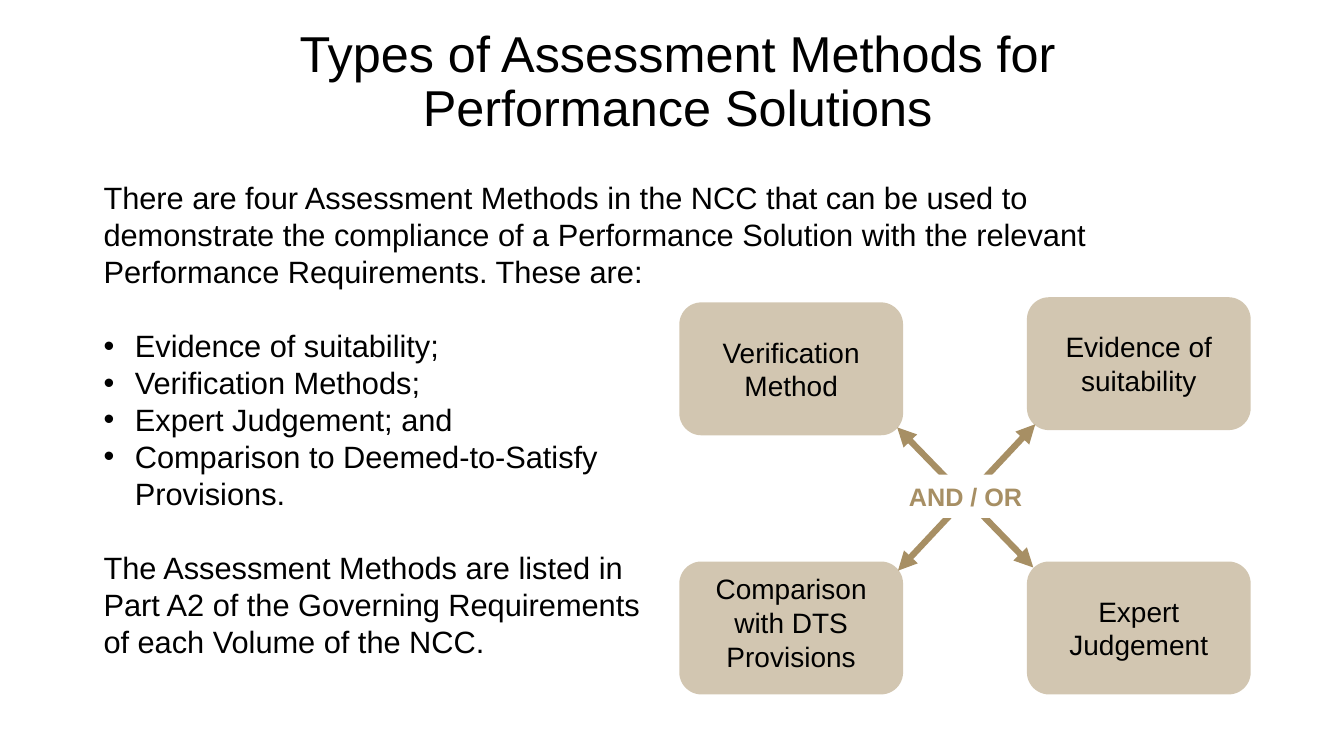
from lxml.etree import SubElement
from pptx import Presentation
from pptx.dml.color import RGBColor
from pptx.enum.shapes import MSO_CONNECTOR, MSO_SHAPE
from pptx.enum.text import MSO_ANCHOR, PP_ALIGN
from pptx.oxml.ns import qn
from pptx.util import Cm, Pt

BLACK = RGBColor(0x00, 0x00, 0x00)
WHITE = RGBColor(0xFF, 0xFF, 0xFF)
TAN = RGBColor(0xA7, 0x8F, 0x64)

BODY_SIZE = 22
BLANK_LINE = Pt(26.4)
INTRO = ("There are four Assessment Methods in the NCC that can be used to "
         "demonstrate the compliance of a Performance Solution with the relevant "
         "Performance Requirements. These are:")
METHODS = [
    "Evidence of suitability;",
    "Verification Methods;",
    "Expert Judgement; and",
    "Comparison to Deemed-to-Satisfy\vProvisions.",
]
CLOSING = ("The Assessment Methods are listed in\vPart A2 of the Governing "
           "Requirements\vof each Volume of the NCC.")

LEFT_COL, RIGHT_COL, BOTTOM_ROW = 17.12, 25.88, 14.15
BOXES = [
    ("Verification Method", LEFT_COL, 7.62, 0.13),
    ("Comparison with DTS Provisions", LEFT_COL, BOTTOM_ROW, 0.41),
    ("Evidence of suitability", RIGHT_COL, 7.49, 0.13),
    ("Expert Judgement", RIGHT_COL, BOTTOM_ROW, 0.13),
]
ARROWS = [
    (22.61, 10.77, 26.04, 14.3),
    (26.09, 10.69, 22.63, 14.38),
]


def format_paragraph(p, size, color=BLACK, bold=False, align=PP_ALIGN.CENTER):
    p.alignment = align
    for r in p.runs:
        r.font.name = "Arial"
        r.font.size = Pt(size)
        r.font.bold = bold
        r.font.color.rgb = color


def set_title(s, text):
    sp = s.shapes.title
    sp.left, sp.top, sp.width, sp.height = Cm(3.68), Cm(0.84), Cm(26.8), Cm(2.51)
    tf = sp.text_frame
    tf.text = text
    tf.word_wrap = True
    tf.vertical_anchor = MSO_ANCHOR.MIDDLE
    p = tf.paragraphs[0]
    p.line_spacing = 0.9
    format_paragraph(p, 36)


def add_label_shape(s, kind, text, left, top, width, height, fill):
    sp = s.shapes.add_shape(kind, Cm(left), Cm(top), Cm(width), Cm(height))
    sp.shadow.inherit = False
    sp.fill.solid()
    sp.fill.fore_color.rgb = fill
    sp.line.fill.background()
    tf = sp.text_frame
    tf.text = text
    tf.word_wrap = True
    tf.vertical_anchor = MSO_ANCHOR.MIDDLE
    return sp


def add_method_box(s, text, left, top, bottom_margin):
    sp = add_label_shape(s, MSO_SHAPE.ROUNDED_RECTANGLE, text,
                         left, top, 5.64, 3.35, TAN)
    color = sp.element.spPr.find(qn("a:solidFill")).find(qn("a:srgbClr"))
    SubElement(color, qn("a:alpha"), val="50000")
    sp.text_frame.margin_bottom = Cm(bottom_margin)
    format_paragraph(sp.text_frame.paragraphs[0], 20)


def add_double_arrow(s, x1, y1, x2, y2):
    cx = s.shapes.add_connector(MSO_CONNECTOR.STRAIGHT,
                                Cm(x1), Cm(y1), Cm(x2), Cm(y2))
    cx.line.color.rgb = TAN
    cx.line.width = Pt(4.5)
    ln = cx.line._get_or_add_ln()
    for end in ("a:headEnd", "a:tailEnd"):
        SubElement(ln, qn(end), type="triangle")
    SubElement(cx.element.spPr, qn("a:effectLst"))


def add_and_or(s):
    sp = add_label_shape(s, MSO_SHAPE.RECTANGLE, "AND / OR",
                         22.1, 11.96, 4.47, 1.09, WHITE)
    format_paragraph(sp.text_frame.paragraphs[0], 18, TAN, bold=True)


def set_bullet(p):
    pPr = p._p.get_or_add_pPr()
    pPr.set("marL", str(Cm(0.79)))
    pPr.set("indent", str(-Cm(0.79)))
    SubElement(pPr, qn("a:buFont"), typeface="Arial")
    SubElement(pPr, qn("a:buChar"), char="•")


def add_body(s):
    tf = s.shapes.add_textbox(Cm(2.36), Cm(4.39), Cm(26.04), Cm(12.47)).text_frame
    tf.word_wrap = True
    for i, text in enumerate([INTRO, *METHODS, CLOSING]):
        p = tf.add_paragraph() if i else tf.paragraphs[0]
        p.text = text
        format_paragraph(p, BODY_SIZE, align=PP_ALIGN.LEFT)
        if text in (METHODS[0], CLOSING):
            p.space_before = BLANK_LINE
        if text in METHODS:
            set_bullet(p)


def main():
    prs = Presentation()
    prs.slide_width, prs.slide_height = Cm(33.87), Cm(19.05)
    s = prs.slides.add_slide(prs.slide_layouts[5])
    set_title(s, "Types of Assessment Methods for Performance Solutions")
    for box in BOXES:
        add_method_box(s, *box)
    for arrow in ARROWS:
        add_double_arrow(s, *arrow)
    add_and_or(s)
    add_body(s)
    prs.save("out.pptx")


if __name__ == "__main__":
    main()
